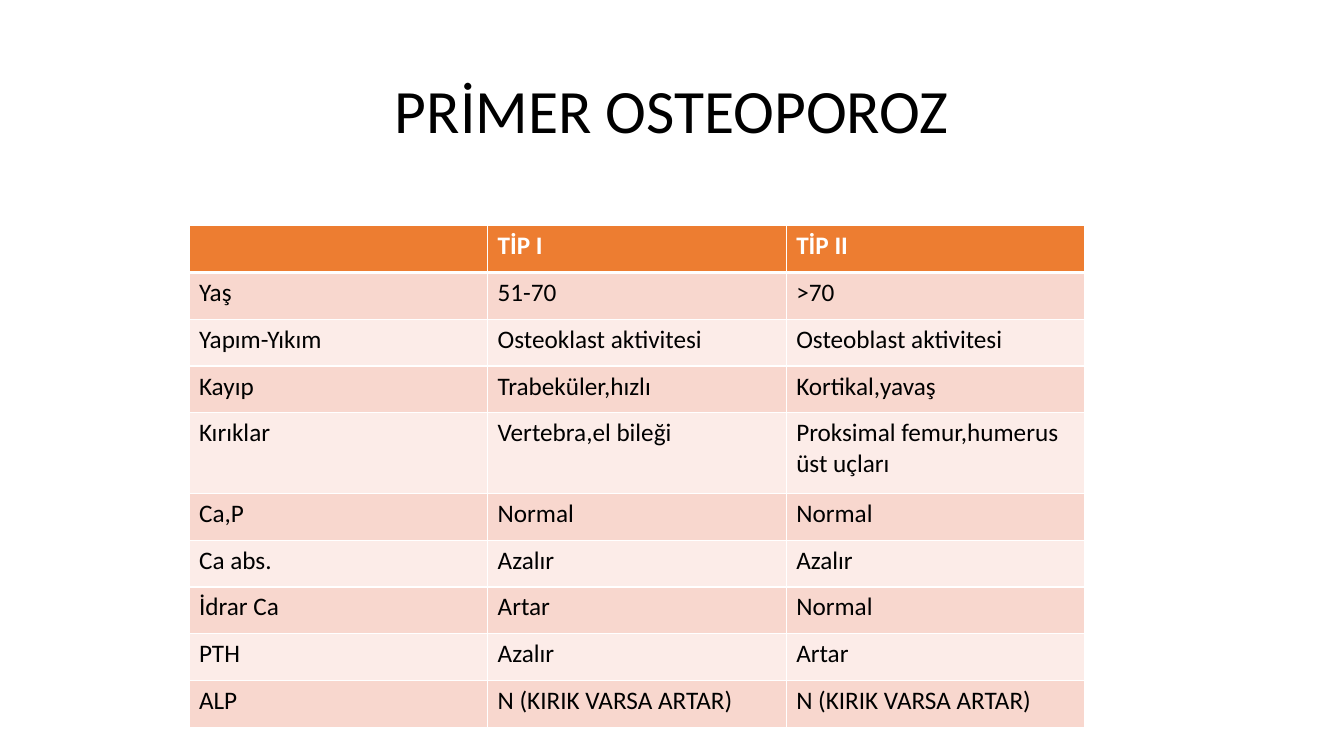
from lxml.etree import SubElement
from pptx import Presentation
from pptx.dml.color import RGBColor
from pptx.enum.text import MSO_ANCHOR, PP_ALIGN
from pptx.oxml.ns import qn
from pptx.util import Pt

BLACK = RGBColor(0x00, 0x00, 0x00)
WHITE = RGBColor(0xFF, 0xFF, 0xFF)
ORANGE = RGBColor(0xED, 0x7D, 0x31)
ROSE = RGBColor(0xF8, 0xD7, 0xCE)
PALE_ROSE = RGBColor(0xFC, 0xEC, 0xE8)

ROWS = [
    ("", "TİP I", "TİP II"),
    ("Yaş", "51-70", ">70"),
    ("Yapım-Yıkım", "Osteoklast aktivitesi", "Osteoblast aktivitesi"),
    ("Kayıp", "Trabeküler,hızlı", "Kortikal,yavaş"),
    ("Kırıklar", "Vertebra,el bileği", "Proksimal femur,humerus üst uçları"),
    ("Ca,P", "Normal", "Normal"),
    ("Ca abs.", "Azalır", "Azalır"),
    ("İdrar Ca", "Artar", "Normal"),
    ("PTH", "Azalır", "Artar"),
    ("ALP", "N (KIRIK VARSA ARTAR)", "N (KIRIK VARSA ARTAR)"),
]
FRACTURE_ROW = 4


class SlideBuilder:
    """Holds the text style and the current slide, and adds elements to it."""

    def __init__(self, slide, font_name):
        self.slide = slide
        self.font_name = font_name

    def format_text(self, para, size, color, bold=False):
        for span in para.runs:
            span.font.name = self.font_name
            span.font.size = Pt(size)
            span.font.bold = bold
            span.font.color.rgb = color

    def add_title(self, text, left, top, width, height):
        box = self.slide.shapes.add_textbox(Pt(left), Pt(top), Pt(width), Pt(height))
        frame = box.text_frame
        frame.word_wrap = True
        frame.vertical_anchor = MSO_ANCHOR.MIDDLE
        frame.text = text
        para = frame.paragraphs[0]
        para.alignment = PP_ALIGN.CENTER
        para.line_spacing = 0.9
        self.format_text(para, 44, BLACK)

    def add_borders(self, cell, top, bottom):
        properties = cell._tc.get_or_add_tcPr()
        for side, weight in (("L", 1), ("R", 1), ("T", top), ("B", bottom)):
            line = SubElement(properties, qn(f"a:ln{side}"), w=str(Pt(weight)))
            fill = SubElement(line, qn("a:solidFill"))
            SubElement(fill, qn("a:srgbClr"), val=str(WHITE))

    def add_table(self, rows, left, top, column_width, heights):
        columns = len(rows[0])
        table = self.slide.shapes.add_table(
            len(rows), columns, Pt(left), Pt(top), Pt(column_width * columns), Pt(sum(heights))
        ).table
        for column in table.columns:
            column.width = Pt(column_width)
        for index, texts in enumerate(rows):
            table.rows[index].height = Pt(heights[index])
            header = index == 0
            band = ORANGE if header else (PALE_ROSE, ROSE)[index % 2]
            for cell, text in zip(table.rows[index].cells, texts):
                self.add_borders(cell, 3 if index == 1 else 1, 3 if header else 1)
                cell.fill.solid()
                cell.fill.fore_color.rgb = band
                cell.text_frame.text = text
                self.format_text(
                    cell.text_frame.paragraphs[0], 18, WHITE if header else BLACK, header
                )


def main():
    deck = Presentation()
    deck.slide_width = Pt(960)
    deck.slide_height = Pt(540)
    page = SlideBuilder(deck.slides.add_slide(deck.slide_layouts[6]), "Calibri")
    page.add_title("PRİMER OSTEOPOROZ", 66, 28.75, 828, 104.4)
    heights = [57.6 if index == FRACTURE_ROW else 33.4 for index in range(len(ROWS))]
    page.add_table(ROWS, 135, 161.3, 213.3, heights)
    deck.save("out.pptx")


if __name__ == "__main__":
    main()
